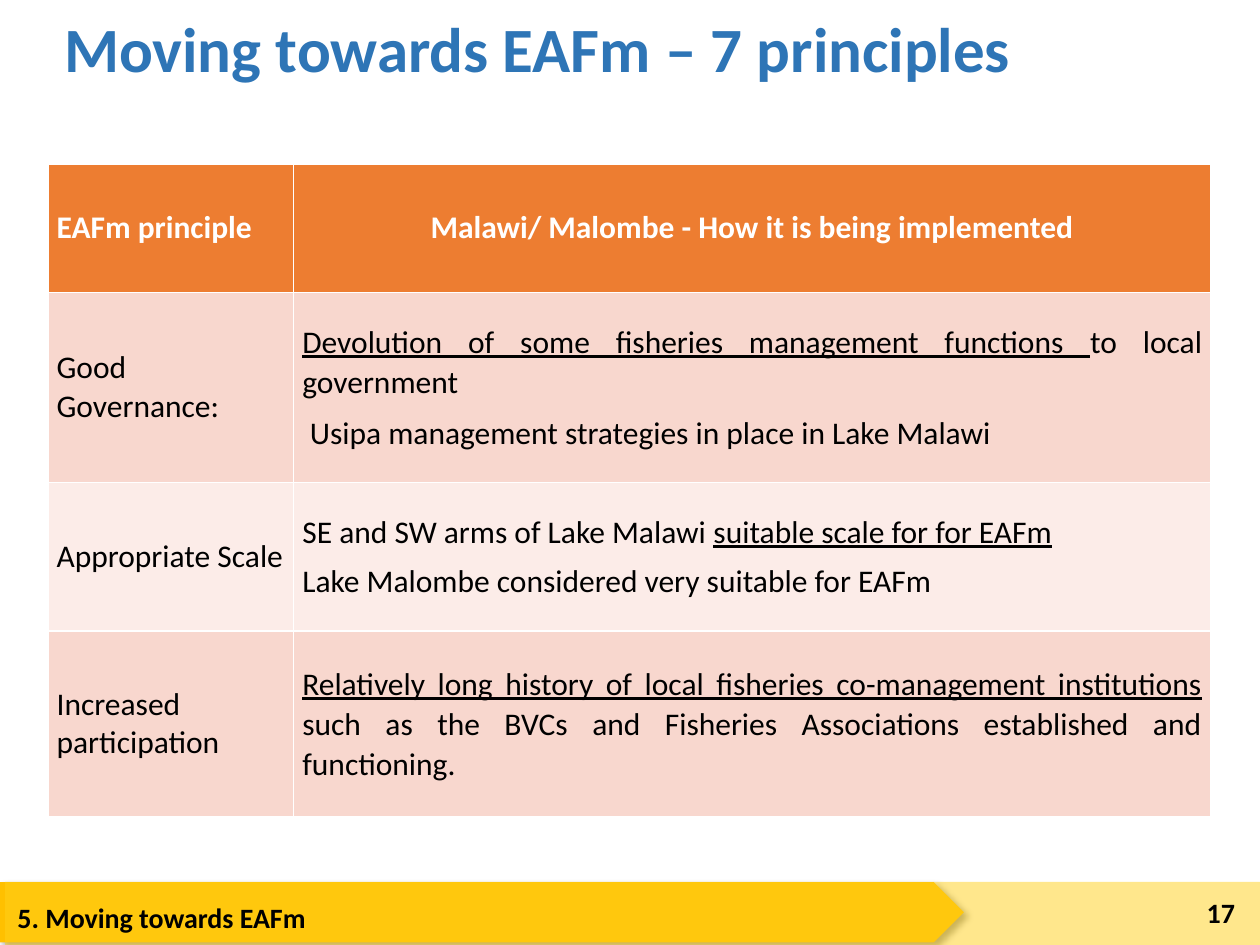
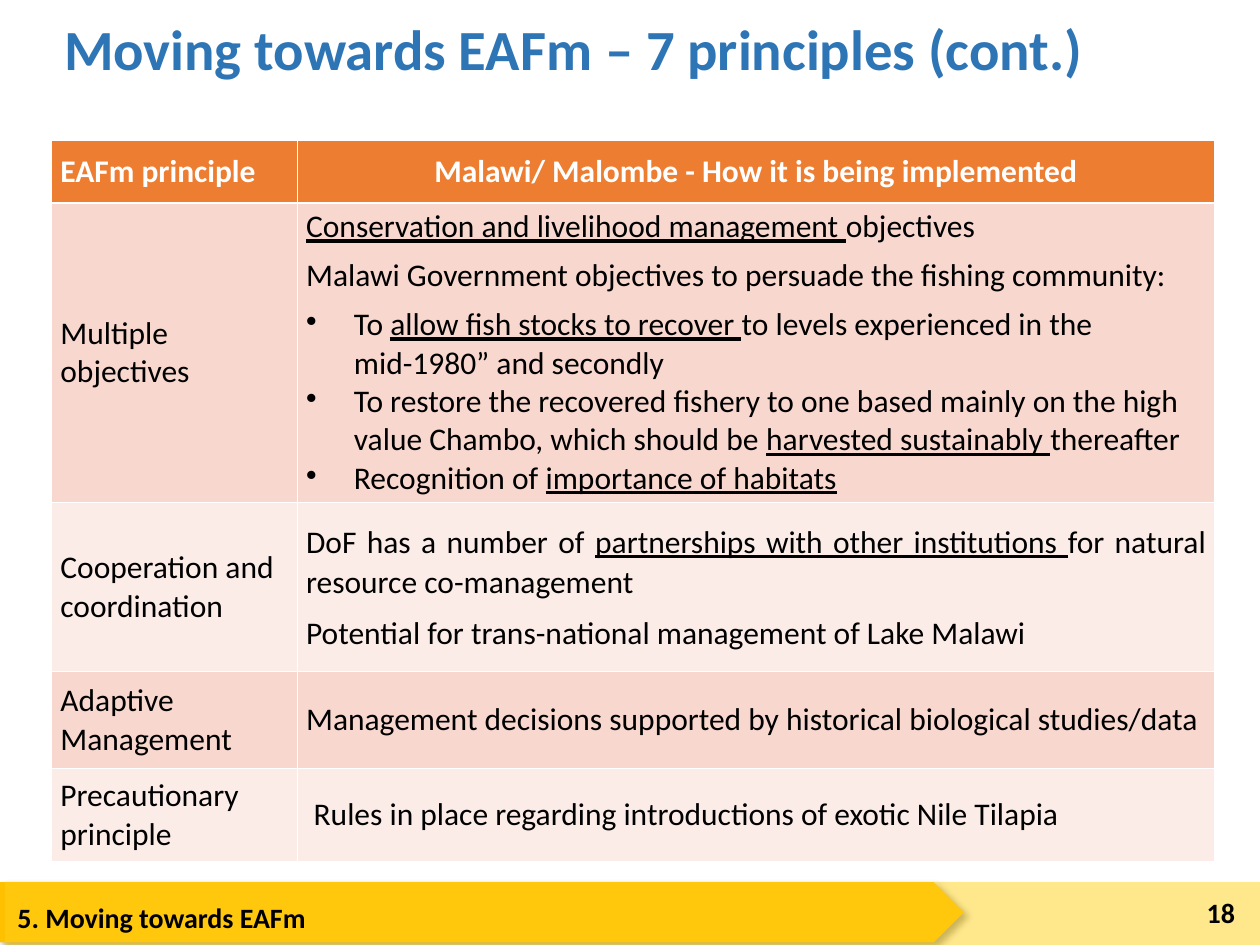
from lxml import etree
from pptx import Presentation
from pptx import util as u
from pptx.dml.color import RGBColor
from pptx.enum import shapes, text
from pptx.oxml.ns import qn

COLS, ROWS = 100, 75
HUES = {
    "title": "2E75B6", "head": "ED7D31", "odd": "F8D7CE", "even": "FCECE8",
    "arrow": "FFC000", "band": "FFD01B", "ink": "000000", "white": "FFFFFF",
}
LEFT, MID, RIGHT, JUST = (text.PP_ALIGN.LEFT, text.PP_ALIGN.CENTER,
                          text.PP_ALIGN.RIGHT, text.PP_ALIGN.JUSTIFY)
WIDTHS = (19.5, 72.8)
HEADS = ("EAFm principle", "Malawi/ Malombe - How it is being implemented")

PAGES = [
    dict(title="Moving towards EAFm – 7 principles", size=36, num=17,
         spot=(3.8, 13), head=10.2, rows=[
             (15.1, "Good Governance:", JUST, [
                 "_Devolution of some fisheries management functions _to local government",
                 ">Usipa management strategies in place in Lake Malawi"]),
             (11.8, "Appropriate Scale", LEFT, [
                 "SE and SW arms of Lake Malawi _suitable scale for for EAFm_",
                 "Lake Malombe considered very suitable for EAFm"]),
             (14.7, "Increased participation", JUST, [
                 "_Relatively long history of local fisheries co-management institutions _"
                 "such as the BVCs and Fisheries Associations established and functioning."]),
         ]),
    dict(title="Moving towards EAFm – 7 principles (cont.)", size=32.4, num=18,
         spot=(4.1, 11.1), head=5, rows=[
             (23.8, "Multiple objectives", LEFT, [
                 "_Conservation and livelihood management _objectives",
                 "Malawi Government objectives to persuade the fishing community:",
                 "•To _allow fish stocks to recover _to levels experienced in the "
                 "mid-1980” and secondly",
                 "•To restore the recovered fishery to one based mainly on the high "
                 "value Chambo, which should be _harvested sustainably _thereafter",
                 "•Recognition of _importance of habitats_"]),
             (13.4, "Cooperation and coordination", JUST, [
                 "DoF has a number of _partnerships with other institutions _"
                 "for natural resource co-management",
                 "Potential for trans-national management of Lake Malawi"]),
             (7.7, "Adaptive Management", LEFT, [
                 "Management decisions supported by historical biological studies/data"]),
             (7.4, "Precautionary principle", LEFT, [
                 ">Rules in place regarding introductions of exotic Nile Tilapia"]),
         ]),
]


class Deck:
    font = "Calibri"

    def __init__(self):
        self.prs = Presentation()
        self.prs.slide_width, self.prs.slide_height = u.Inches(10), u.Inches(7.5)
        self.slide = None

    def page(self):
        self.slide = self.prs.slides.add_slide(self.prs.slide_layouts[6])

    def x(self, cols):
        return round(self.prs.slide_width * cols / COLS)

    def y(self, rows):
        return round(self.prs.slide_height * rows / ROWS)

    def box(self, left, top, wide, high):
        return self.x(left), self.y(top), self.x(wide), self.y(high)

    def hue(self, name):
        return RGBColor.from_string(HUES[name])

    def style(self, para, size, hue, bold, align=LEFT):
        para.alignment = align
        font = para.font
        font.name, font.size, font.bold = self.font, u.Pt(size), bold
        font.color.rgb = self.hue(hue)

    def shape(self, kind, spot, hue, alpha=None, shade=False):
        form = self.slide.shapes.add_shape(kind, *self.box(*spot))
        form.shadow.inherit = False
        form.fill.solid()
        form.fill.fore_color.rgb = self.hue(hue)
        form.line.fill.background()
        props = form._element.spPr
        if alpha:
            tint = props.find(qn("a:solidFill")).find(qn("a:srgbClr"))
            etree.SubElement(tint, qn("a:alpha"), val=str(alpha * 1000))
        if shade:
            cast = etree.SubElement(
                props.find(qn("a:effectLst")), qn("a:outerShdw"),
                blurRad=str(u.Pt(4)), dist=str(u.Pt(3)), dir="2700000")
            tint = etree.SubElement(cast, qn("a:srgbClr"), val=HUES["ink"])
            etree.SubElement(tint, qn("a:alpha"), val="40000")

    def label(self, words, spot, size, hue="ink", align=LEFT,
              anchor=text.MSO_ANCHOR.MIDDLE, lead=None):
        frame = self.slide.shapes.add_textbox(*self.box(*spot)).text_frame
        frame.word_wrap, frame.vertical_anchor = True, anchor
        para = frame.paragraphs[0]
        para.add_run().text = words
        para.line_spacing = lead
        self.style(para, size, hue, True, align)

    def indent(self, para, words):
        props = para._p.get_or_add_pPr()
        if words.startswith("•"):
            props.set("marL", str(self.x(3.8)))
            props.set("indent", str(-self.x(3.8)))
            etree.SubElement(props, qn("a:buChar"), char="•")
        elif words.startswith(">"):
            props.set("marL", str(self.x(0.6)))
        return words.lstrip("•>")

    def cell(self, cell, lines, fill, hue="ink", bold=False, align=LEFT):
        cell.fill.solid()
        cell.fill.fore_color.rgb = self.hue(fill)
        cell.margin_left = cell.margin_right = self.x(0.7)
        cell.margin_top = cell.margin_bottom = 0
        cell.vertical_anchor = text.MSO_ANCHOR.MIDDLE
        frame = cell.text_frame
        for i, line in enumerate(lines):
            para = frame.add_paragraph() if i else frame.paragraphs[0]
            if i and not (line[0] == lines[i - 1][0] == "•"):
                para.space_before = u.Pt(6)
            if align == JUST:
                para.line_spacing = 1.05
            words = self.indent(para, line)
            self.style(para, 18, hue, bold, align)
            for j, part in enumerate(words.split("_")):
                if part:
                    run = para.add_run()
                    run.text = part
                    if j % 2:
                        run.font.underline = True

    def table(self, spot, head, rows):
        highs = [head] + [row[0] for row in rows]
        area = self.box(*spot, sum(WIDTHS), sum(highs))
        grid = self.slide.shapes.add_table(len(highs), len(WIDTHS), *area).table
        grid.horz_banding = False
        for col, wide in zip(grid.columns, WIDTHS):
            col.width = self.x(wide)
        for row, high in zip(grid.rows, highs):
            row.height = self.y(high)
        for i, (words, align) in enumerate(zip(HEADS, (LEFT, MID))):
            self.cell(grid.cell(0, i), [words], "head", "white", True, align)
        for i, (_, name, align, lines) in enumerate(rows, 1):
            fill = "odd" if i % 2 else "even"
            self.cell(grid.cell(i, 0), [name], fill)
            self.cell(grid.cell(i, 1), lines, fill, align=align)

    def footer(self, num):
        kinds = shapes.MSO_SHAPE
        self.shape(kinds.PENTAGON, (0, 70, 76.5, 4.8), "arrow", shade=True)
        self.shape(kinds.RECTANGLE, (0.4, 70, 99.6, 5), "band", alpha=50)
        self.label("5. Moving towards EAFm", (0.4, 71, 73.5, 4), 16,
                   anchor=text.MSO_ANCHOR.TOP)
        self.label(str(num), (91.7, 70.4, 7.3, 4), 16, align=RIGHT)


def main():
    deck = Deck()
    for page in PAGES:
        deck.page()
        deck.footer(page["num"])
        deck.label(page["title"], (4.1, 0, 89.1, 8.2), page["size"], "title", lead=0.9)
        deck.table(page["spot"], page["head"], page["rows"])
    deck.prs.save("out.pptx")


if __name__ == "__main__":
    main()
